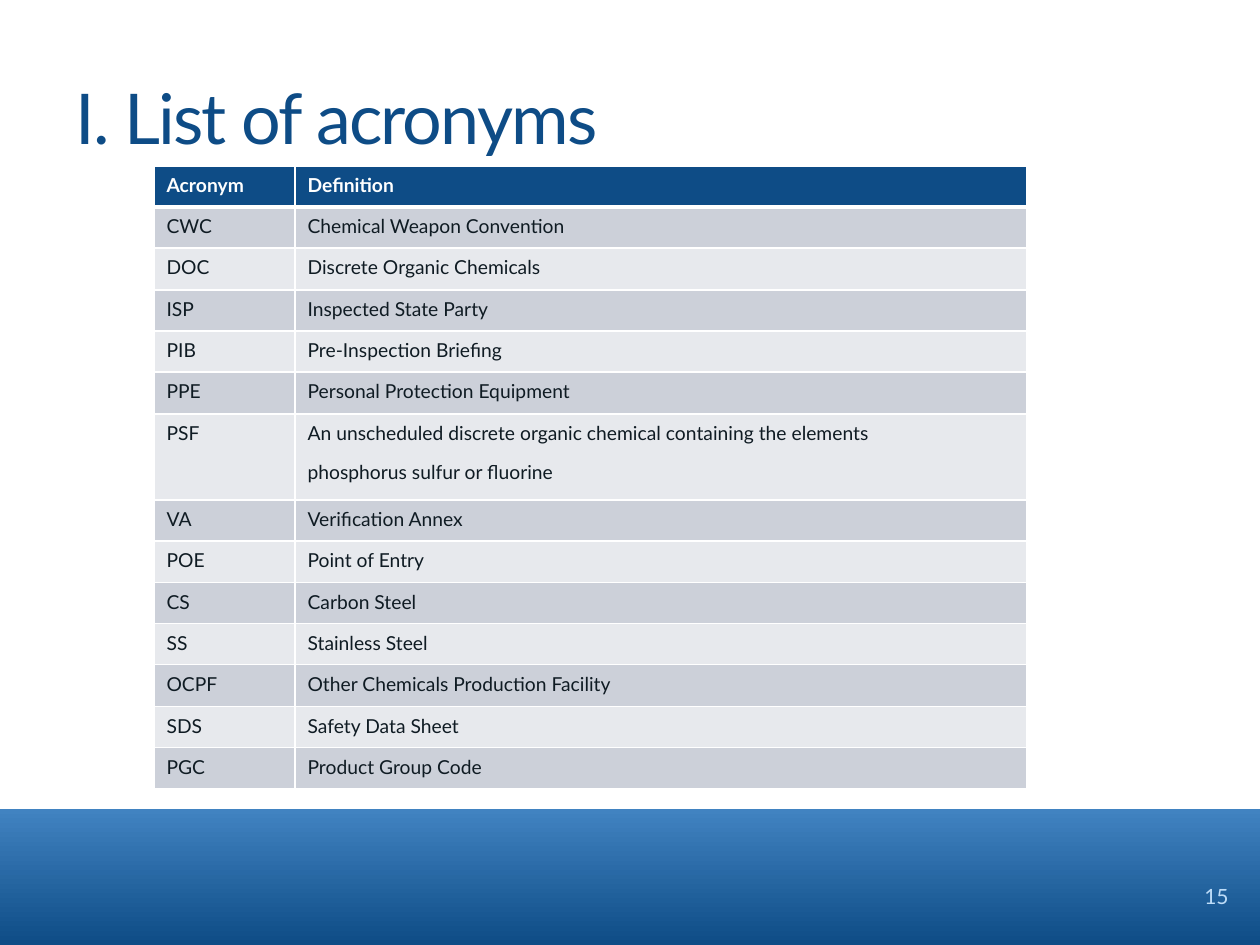
from dataclasses import dataclass

from lxml.etree import SubElement
from pptx import Presentation
from pptx.dml.color import RGBColor
from pptx.enum.shapes import MSO_SHAPE
from pptx.enum.text import MSO_ANCHOR, PP_ALIGN
from pptx.oxml import parse_xml
from pptx.oxml.ns import nsdecls
from pptx.util import Emu, Pt

PX = 914400 / 126


def px(n):
    return Emu(round(n * PX))


@dataclass(frozen=True)
class Theme:
    font: str = "Lato"
    navy: str = "0E4C86"
    sky: str = "4183C1"
    pale: str = "BDDCF8"
    ink: str = "0F1B23"
    white: str = "FFFFFF"
    stripes: tuple = ("E7E9ED", "CCD0D9")
    title_size: int = 40
    number_size: int = 12
    table_size: int = 11


ACRONYMS = [
    ("Acronym", "Definition"),
    ("CWC", "Chemical Weapon Convention"),
    ("DOC", "Discrete Organic Chemicals"),
    ("ISP", "Inspected State Party"),
    ("PIB", "Pre-Inspection Briefing"),
    ("PPE", "Personal Protection Equipment"),
    ("PSF", "An unscheduled discrete organic chemical containing the elements\n"
            "phosphorus sulfur or fluorine"),
    ("VA", "Verification Annex"),
    ("POE", "Point of Entry"),
    ("CS", "Carbon Steel"),
    ("SS", "Stainless Steel"),
    ("OCPF", "Other Chemicals Production Facility"),
    ("SDS", "Safety Data Sheet"),
    ("PGC", "Product Group Code"),
]


class Deck:
    """Holds the theme and the slide being built."""

    def __init__(self, theme):
        self.theme = theme
        self.prs = Presentation()
        self.prs.slide_width, self.prs.slide_height = px(1260), px(945)
        self.s = self.prs.slides.add_slide(self.prs.slide_layouts[6])

    def style(self, p, size, color, bold=False):
        for r in p.runs:
            r.font.name = self.theme.font
            r.font.size = Pt(size)
            r.font.bold = bold
            r.font.color.rgb = RGBColor.from_string(color)

    def band(self, x, y, w, h, top, bottom):
        """Rectangle with a vertical gradient."""
        sp = self.s.shapes.add_shape(MSO_SHAPE.RECTANGLE, px(x), px(y), px(w), px(h))
        sp.shadow.inherit = False
        sp.line.fill.background()
        sp.fill.gradient()
        sp.fill.gradient_angle = 270
        for stop, color in zip(sp.fill.gradient_stops, (top, bottom)):
            stop.color.rgb = RGBColor.from_string(color)

    def text(self, x, y, w, h, text, size, color, align=PP_ALIGN.LEFT,
             anchor=MSO_ANCHOR.TOP, tracking=0):
        tf = self.s.shapes.add_textbox(px(x), px(y), px(w), px(h)).text_frame
        tf.word_wrap = True
        tf.vertical_anchor = anchor
        tf.text = text
        p = tf.paragraphs[0]
        p.alignment = align
        self.style(p, size, color)
        if tracking:
            p.runs[0].font._element.set("spc", str(tracking * 100))

    def borders(self, cell, top, bottom):
        """White cell borders, widths in points."""
        widths = {"lnL": 1, "lnR": 1, "lnT": top, "lnB": bottom}
        tc_pr = cell._tc.get_or_add_tcPr()
        for i, (tag, width) in enumerate(widths.items()):
            ln = parse_xml(f'<a:{tag} {nsdecls("a")} w="{Pt(width)}"/>')
            fill = SubElement(ln, ln.tag.replace(tag, "solidFill"))
            SubElement(fill, ln.tag.replace(tag, "srgbClr"), val=self.theme.white)
            tc_pr.insert(i, ln)

    def table(self, x, y, widths, heights, rows):
        t = self.theme
        table = self.s.shapes.add_table(len(rows), len(widths), px(x), px(y),
                                        px(sum(widths)), px(sum(heights))).table
        for col, w in zip(table.columns, widths):
            col.width = px(w)
        for i, (row, h) in enumerate(zip(rows, heights)):
            table.rows[i].height = px(h)
            header = i == 0
            for j, text in enumerate(row):
                cell = table.cell(i, j)
                cell.fill.solid()
                cell.fill.fore_color.rgb = RGBColor.from_string(
                    t.navy if header else t.stripes[i % 2])
                self.borders(cell, 3 if i == 1 else 1, 3 if header else 1)
                cell.text_frame.text = text
                for p in cell.text_frame.paragraphs:
                    p.line_spacing = 1.07
                    p.space_after = Pt(8)
                    self.style(p, t.table_size, t.white if header else t.ink, header)


def main():
    t = Theme()
    deck = Deck(t)
    deck.band(0, 809, 1260, 136, t.sky, t.navy)
    deck.text(1136, 877, 105, 44, "15", t.number_size, t.pale, PP_ALIGN.RIGHT)
    deck.text(63, 38, 1186, 157, "I. List of acronyms", t.title_size, t.navy,
              anchor=MSO_ANCHOR.MIDDLE, tracking=-1)
    # Every third row is a pixel taller, for an average pitch of 41 1/3 px.
    heights = [86 if "\n" in definition else 41 + (i % 3 == 2)
               for i, (_, definition) in enumerate(ACRONYMS)]
    deck.table(154, 166, (141, 732), heights, ACRONYMS)
    deck.prs.save("out.pptx")


if __name__ == "__main__":
    main()
